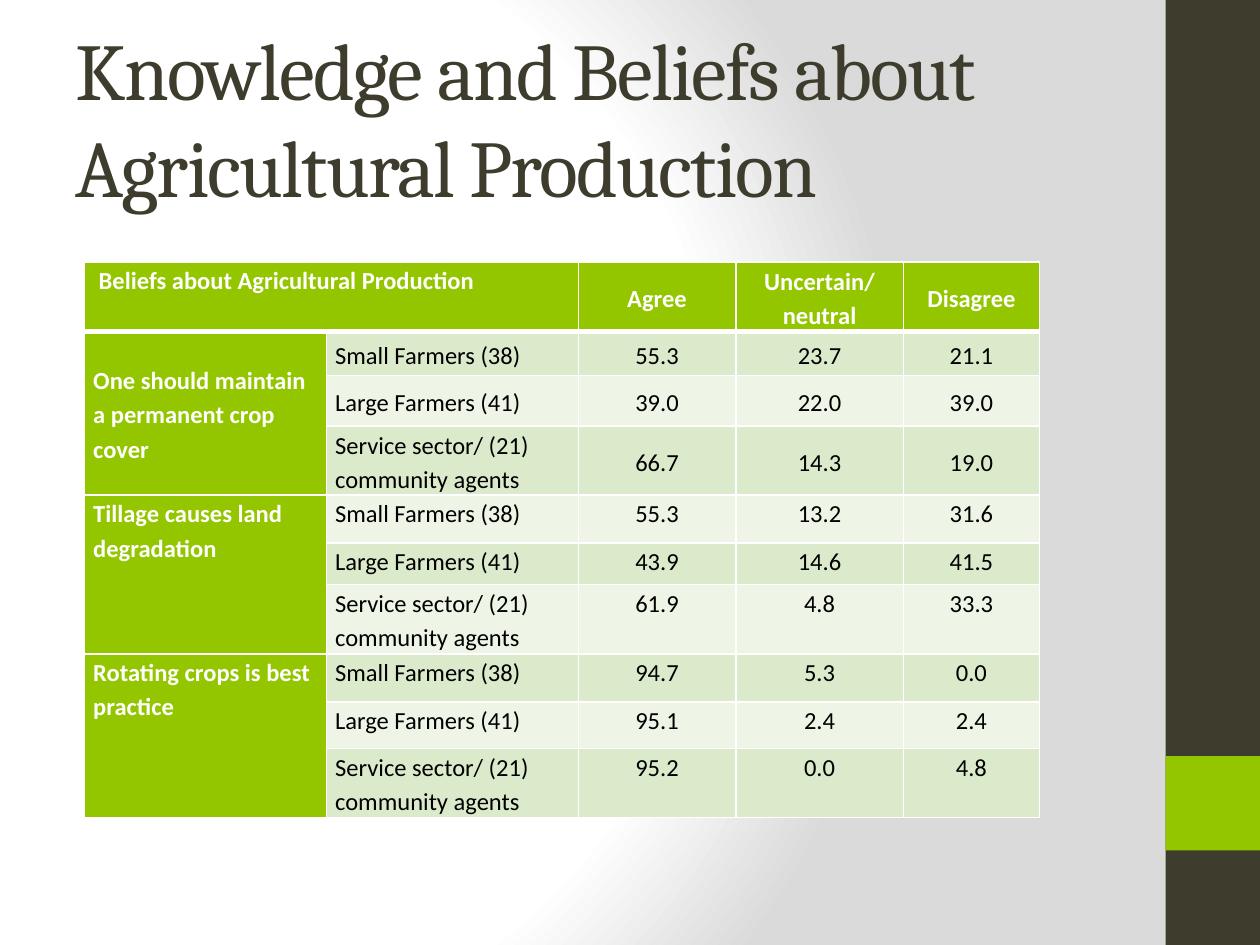
from dataclasses import dataclass
from typing import NamedTuple

from pptx import Presentation
from pptx.dml.color import RGBColor
from pptx.enum.shapes import MSO_SHAPE
from pptx.enum.text import MSO_ANCHOR as Anchor, PP_ALIGN as Align
from pptx.oxml import parse_xml
from pptx.oxml.ns import nsdecls
from pptx.util import Inches, Pt


@dataclass(frozen=True)
class Theme:
    dark: str = "3E3D2D"
    green: str = "94C600"
    white: str = "FFFFFF"
    black: str = "000000"
    grey: str = "DADADA"
    bands: tuple[str, str] = ("DCEACC", "EEF5E7")
    title_font: str = "Cambria"
    body_font: str = "Calibri"
    title_size: float = 46
    body_size: float = 14
    line_spacing: float = 1.15
    rule: float = 1
    header_rule: float = 3


class Band(NamedTuple):
    top: float
    height: float
    color: str


class Belief(NamedTuple):
    statement: str
    anchor: Anchor
    scores: tuple[tuple[str, str, str], ...]  # one row per group


THEME = Theme()
SIDEBAR = (Band(0, 7.5, THEME.dark), Band(6, 0.75, THEME.green))
COLUMN_WIDTHS = (1.92, 2, 1.25, 1.33, 1.08)
ROW_HEIGHTS = (0.55, 0.35, 0.4, 0.55, 0.38, 0.33, 0.55, 0.38, 0.37, 0.55)
ANSWERS = ("Agree", "Uncertain/ neutral", "Disagree")
GROUPS = ("Small Farmers (38)", "Large Farmers (41)",
          "Service sector/ (21) community agents")
BELIEFS = (
    Belief("One should maintain a permanent crop cover", Anchor.MIDDLE,
           (("55.3", "23.7", "21.1"), ("39.0", "22.0", "39.0"), ("66.7", "14.3", "19.0"))),
    Belief("Tillage causes land degradation", Anchor.TOP,
           (("55.3", "13.2", "31.6"), ("43.9", "14.6", "41.5"), ("61.9", "4.8", "33.3"))),
    Belief("Rotating crops is best practice", Anchor.TOP,
           (("94.7", "5.3", "0.0"), ("95.1", "2.4", "2.4"), ("95.2", "0.0", "4.8"))),
)


def add_run(paragraph, text: str, font: str, size: float, color: str, bold: bool = False):
    run = paragraph.add_run()
    run.text = text
    run.font.name = font
    run.font.size = Pt(size)
    run.font.bold = bold
    run.font.color.rgb = RGBColor.from_string(color)
    return run


def set_background(slide) -> None:
    stops = ((0, THEME.white), (75, THEME.white), (100, THEME.grey))
    stop_xml = "".join(f'<a:gs pos="{pos * 1000}"><a:srgbClr val="{color}"/></a:gs>'
                       for pos, color in stops)
    slide.element.cSld.insert(0, parse_xml(
        f'<p:bg {nsdecls("p", "a")}><p:bgPr><a:gradFill rotWithShape="1">'
        f'<a:gsLst>{stop_xml}</a:gsLst><a:path path="circle">'
        '<a:fillToRect l="20000" t="50000" r="100000" b="50000"/></a:path>'
        '</a:gradFill><a:effectLst/></p:bgPr></p:bg>'))


def add_band(slide, band: Band) -> None:
    shape = slide.shapes.add_shape(MSO_SHAPE.RECTANGLE, Inches(9.25), Inches(band.top),
                                   Inches(0.75), Inches(band.height))
    shape.shadow.inherit = False
    shape.fill.solid()
    shape.fill.fore_color.rgb = RGBColor.from_string(band.color)
    shape.line.fill.background()


def add_title(slide, text: str) -> None:
    frame = slide.shapes.add_textbox(Inches(0.5), Inches(0.3),
                                     Inches(8.33), Inches(1.25)).text_frame
    frame.word_wrap = True
    frame.vertical_anchor = Anchor.MIDDLE
    run = add_run(frame.paragraphs[0], text, THEME.title_font, THEME.title_size, THEME.dark)
    run.font._element.set("spc", "-100")


def set_borders(cell, top: float, bottom: float) -> None:
    properties = cell._tc.get_or_add_tcPr()
    widths = {"L": THEME.rule, "R": THEME.rule, "T": top, "B": bottom}
    for index, (side, width) in enumerate(widths.items()):
        properties.insert(index, parse_xml(
            f'<a:ln{side} {nsdecls("a")} w="{Pt(width)}"><a:solidFill>'
            f'<a:srgbClr val="{THEME.white}"/></a:solidFill></a:ln{side}>'))


def fill_cell(cell, text: str, anchor: Anchor, align: Align = Align.LEFT,
              heading: bool = False) -> None:
    cell.vertical_anchor = anchor
    paragraph = cell.text_frame.paragraphs[0]
    paragraph.alignment = align
    paragraph.line_spacing = THEME.line_spacing
    add_run(paragraph, text, THEME.body_font, THEME.body_size,
            THEME.white if heading else THEME.black, heading)


def style_grid(table) -> None:
    for row_no, row in enumerate(table.rows):
        row.height = Inches(ROW_HEIGHTS[row_no])
        for column_no, cell in enumerate(row.cells):
            cell.margin_left = cell.margin_right = Inches(0.07)
            cell.margin_top = cell.margin_bottom = 0
            set_borders(cell, THEME.header_rule if row_no == 1 else THEME.rule,
                        THEME.header_rule if row_no == 0 else THEME.rule)
            heading = row_no == 0 or column_no == 0
            color = THEME.green if heading else THEME.bands[(row_no - 1) % 2]
            cell.fill.solid()
            cell.fill.fore_color.rgb = RGBColor.from_string(color)


def add_beliefs_table(slide) -> None:
    table = slide.shapes.add_table(
        len(ROW_HEIGHTS), len(COLUMN_WIDTHS), Inches(0.67), Inches(2.08),
        Inches(sum(COLUMN_WIDTHS)), Inches(sum(ROW_HEIGHTS))).table
    for column, width in zip(table.columns, COLUMN_WIDTHS):
        column.width = Inches(width)
    style_grid(table)

    # Header row
    table.cell(0, 0).merge(table.cell(0, 1))
    fill_cell(table.cell(0, 0), " Beliefs about Agricultural Production",
              Anchor.TOP, heading=True)
    for column_no, answer in enumerate(ANSWERS, 2):
        fill_cell(table.cell(0, column_no), answer, Anchor.MIDDLE, Align.CENTER, heading=True)

    # One block of rows per belief
    for belief_no, belief in enumerate(BELIEFS):
        first = 1 + belief_no * len(GROUPS)
        table.cell(first, 0).merge(table.cell(first + len(GROUPS) - 1, 0))
        fill_cell(table.cell(first, 0), belief.statement, belief.anchor, heading=True)
        for row_no, (group, scores) in enumerate(zip(GROUPS, belief.scores), first):
            fill_cell(table.cell(row_no, 1), group, belief.anchor)
            for column_no, score in enumerate(scores, 2):
                fill_cell(table.cell(row_no, column_no), score, belief.anchor, Align.CENTER)


def main() -> None:
    deck = Presentation()
    deck.slide_width, deck.slide_height = Inches(10), Inches(7.5)
    slide = deck.slides.add_slide(deck.slide_layouts[6])
    set_background(slide)
    for band in SIDEBAR:
        add_band(slide, band)
    add_title(slide, "Knowledge and Beliefs about Agricultural Production")
    add_beliefs_table(slide)
    deck.save("out.pptx")


if __name__ == "__main__":
    main()
